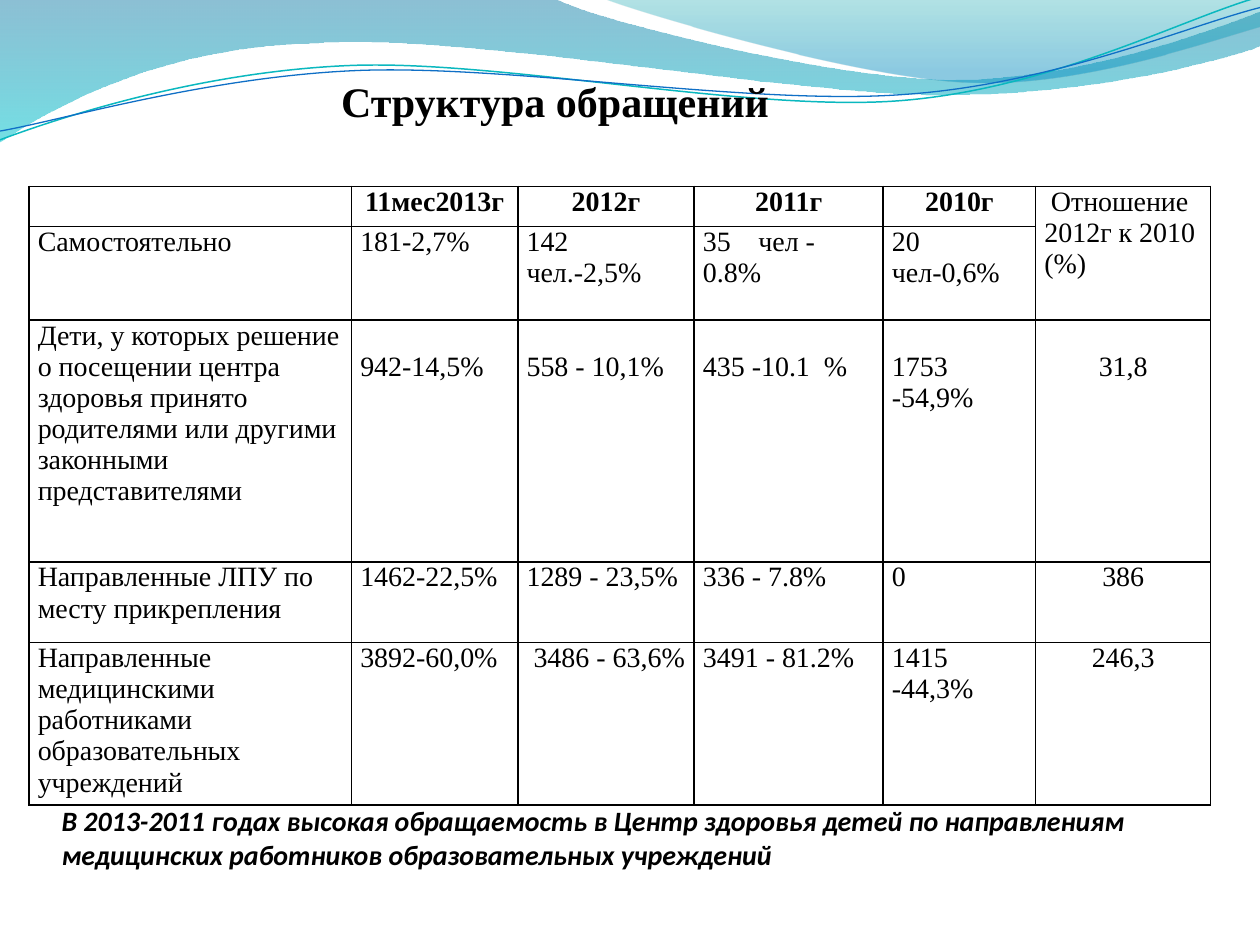
from math import cos, radians, sin

from lxml.etree import SubElement
from pptx import Presentation
from pptx.dml.color import RGBColor
from pptx.enum.text import MSO_ANCHOR as Anchor, PP_ALIGN as Align
from pptx.oxml import parse_xml
from pptx.oxml.ns import nsdecls, qn
from pptx.util import Inches, Pt

COLORS = {
    "text": "000000", "border": "000000", "teal_line": "0AB8BF", "blue_line": "0F6FC6",
    "deep_blue": "0074A1", "cyan": "00C6CF", "sea": "00A1A9", "sky": "008BBF",
}
SERIF, SANS = "Times New Roman", "Calibri"

TITLE = "Структура обращений"
CONCLUSION = ("В 2013-2011 годах высокая обращаемость в Центр здоровья детей по "
              "направлениям медицинских работников образовательных учреждений")
REFERRALS = [
    ["", "11мес2013г", "2012г", "2011г", "2010г", "Отношение \n2012г к 2010 (%)"],
    ["Самостоятельно", "181-2,7%", "142 чел.-2,5%", "35\tчел - 0.8%", "20 чел-0,6%", ""],
    ["Дети, у которых решение\nо посещении центра здоровья принято родителями или "
     "другими законными представителями",
     "942-14,5%", "558 - 10,1%", "435 -10.1  %", "1753 -54,9%", "31,8"],
    ["Направленные ЛПУ по месту прикрепления",
     "1462-22,5%", "1289 - 23,5%", "336 - 7.8%", "0", "386"],
    ["Направленные медицинскими работниками образовательных учреждений",
     "3892-60,0%", " 3486 - 63,6%", "3491 - 81.2%", "1415 -44,3%", "246,3"],
]
COL_WIDTHS = [2.56, 1.32, 1.4, 1.5, 1.21, 1.39]
ROW_HEIGHTS = [0.32, 0.52, 1.92, 0.64, 1.29]
RATIO_COL, CHILDREN_ROW = 5, 2
LINE_GAP = 0.25

# Waves: two numbers are a straight step, six are a Bezier curve
BANDS = [
    {"outline": [(0, 0), (4.4, -0.01), (4.76, 0.17, 6.64, 0.63, 7.58, 0.63),
                 (8.53, 0.63, 9.58, 0.26, 10, 0.09), (10.01, 0.36),
                 (9.83, 0.44, 8.7, 0.76, 7.46, 0.75), (6.22, 0.75, 3.82, 0.28, 2.57, 0.34),
                 (1.29, 0.36, 0.46, 0.83, -0.01, 1.13)],
     "stops": [(0, "deep_blue", 45), (1, "cyan", 55)]},
    {"outline": [(4.79, -0.01), (5.09, 0.11, 6.82, 0.62, 7.69, 0.65),
                 (8.56, 0.69, 9.61, 0.32, 10, 0.21), (10, 0)],
     "stops": [(0, "sea", 30), (0.8, "sky", 45)]},
]
STRANDS = [
    {"outline": [(0, 1.11), (0.48, 0.93, 1.58, 0.57, 2.77, 0.52),
                 (3.95, 0.47, 5.93, 0.89, 7.13, 0.8), (8.33, 0.71, 9.38, 0.15, 9.98, -0.02)],
     "color": "teal_line", "width": 0.85},
    {"outline": [(0, 1.04), (0.47, 0.96, 1.64, 0.61, 2.83, 0.56),
                 (4.03, 0.51, 5.97, 0.84, 7.17, 0.75), (8.36, 0.67, 9.41, 0.21, 10, 0.06)],
     "color": "blue_line", "width": 0.75},
]
STRAND_TILT, STRAND_CENTER = -2.7, (4.99, 0.58)


def rgb(name):
    return RGBColor.from_string(COLORS[name])


def level(x, y, tilt):
    """Undo a tilt around the strands' centre; the shape's rotation restores it."""
    angle, (cx, cy) = radians(-tilt), STRAND_CENTER
    dx, dy = x - cx, y - cy
    return (cx + dx * cos(angle) - dy * sin(angle), cy + dx * sin(angle) + dy * cos(angle))


def draw_wave(shapes, outline, close, tilt=0):
    points = [level(*step[i:i + 2], tilt) for step in outline for i in range(0, len(step), 2)]
    points = [(Inches(x), Inches(y)) for x, y in points]
    builder = shapes.build_freeform(*points[0])
    builder.add_line_segments(points[1:], close=close)
    wave = builder.convert_to_shape()
    wave.shadow.inherit = False
    wave.rotation = tilt
    # Join each curve's three points into one Bezier step
    lines = iter(list(wave._element.iter(qn("a:lnTo"))))
    for step in outline[1:]:
        first = next(lines)
        if len(step) == 6:
            first.tag = qn("a:cubicBezTo")
            for _ in range(2):
                follower = next(lines)
                first.append(follower[0])
                follower.getparent().remove(follower)
    return wave


def style_text(frame, align, **font_values):
    for paragraph in frame.paragraphs:
        paragraph.alignment = align
        for run in paragraph.runs:
            run.font.color.rgb = rgb("text")
            set_values(run.font, font_values)


def set_values(target, values):
    for key, value in values.items():
        setattr(target, key, value)


def add_borders(cell):
    props = cell._tc.get_or_add_tcPr()
    for place, side in enumerate(("lnL", "lnR", "lnT", "lnB")):
        props.insert(place, parse_xml(
            f'<a:{side} {nsdecls("a")} w="12700"><a:solidFill>'
            f'<a:srgbClr val="{COLORS["border"]}"/></a:solidFill></a:{side}>'))


def add_waves(slide):
    for band in BANDS:
        wave = draw_wave(slide.shapes, band["outline"], True)
        wave.line.fill.background()
        wave.fill.gradient()
        wave.fill.gradient_angle = 270
        for stop, (position, color, alpha) in zip(wave.fill.gradient_stops, band["stops"]):
            stop.position = position
            stop.color.rgb = rgb(color)
            tint = stop._gs.find(qn("a:srgbClr"))
            SubElement(tint, qn("a:alpha"), val=str(alpha * 1000))
    strands = slide.shapes.add_group_shape().shapes
    for strand in STRANDS:
        wave = draw_wave(strands, strand["outline"], False, STRAND_TILT)
        wave.fill.background()
        wave.line.color.rgb = rgb(strand["color"])
        wave.line.width = Pt(strand["width"])


def add_referrals(slide):
    table = slide.shapes.add_table(
        len(ROW_HEIGHTS), len(COL_WIDTHS), Inches(0.23), Inches(1.48),
        Inches(sum(COL_WIDTHS)), Inches(sum(ROW_HEIGHTS))).table
    set_values(table, {"first_row": False, "horz_banding": False})
    for column, width in zip(table.columns, COL_WIDTHS):
        column.width = Inches(width)
    for row, height in zip(table.rows, ROW_HEIGHTS):
        row.height = Inches(height)
    for r, texts in enumerate(REFERRALS):
        for c, text in enumerate(texts):
            cell = table.cell(r, c)
            cell.text = text
            lowered = r == CHILDREN_ROW and c > 0
            set_values(cell, {"margin_left": Inches(0.07), "margin_right": Inches(0.07),
                              "margin_top": Inches(LINE_GAP if lowered else 0),
                              "margin_bottom": 0})
            cell.fill.background()
            add_borders(cell)
            centred = r == 0 or c == RATIO_COL
            style_text(cell.text_frame, Align.CENTER if centred else Align.LEFT,
                       name=SERIF, size=Pt(16), bold=r == 0 and c != RATIO_COL)
            if "\t" in text:
                stops = SubElement(cell.text_frame.paragraphs[0]._p.get_or_add_pPr(),
                                   qn("a:tabLst"))
                SubElement(stops, qn("a:tab"), pos=str(Inches(0.44)), algn="l")
    table.cell(0, RATIO_COL).text_frame.paragraphs[1].alignment = Align.LEFT
    table.cell(0, RATIO_COL).merge(table.cell(1, RATIO_COL))


def add_title(slide):
    title = slide.shapes.title
    set_values(title, {"left": Inches(1.48), "top": Inches(0.16),
                       "width": Inches(5.85), "height": Inches(0.91)})
    title.text_frame.text = TITLE
    set_values(title.text_frame, {"vertical_anchor": Anchor.BOTTOM,
                                  "margin_bottom": Inches(0.07)})
    style_text(title.text_frame, Align.CENTER, name=SERIF, size=Pt(24), bold=True)
    slide.shapes._spTree.append(title._element)  # in front of the waves


def add_conclusion(slide):
    conclusion = slide.shapes.add_textbox(
        Inches(0.39), Inches(6.33), Inches(8.67), Inches(0.64)).text_frame
    conclusion.word_wrap = True
    conclusion.text = CONCLUSION
    style_text(conclusion, Align.LEFT, name=SANS, size=Pt(16), bold=True, italic=True)


def main():
    deck = Presentation()
    deck.slide_width, deck.slide_height = Inches(10), Inches(7.5)
    slide = deck.slides.add_slide(deck.slide_layouts[5])
    add_waves(slide)
    add_referrals(slide)
    add_title(slide)
    add_conclusion(slide)
    deck.save("out.pptx")


if __name__ == "__main__":
    main()
